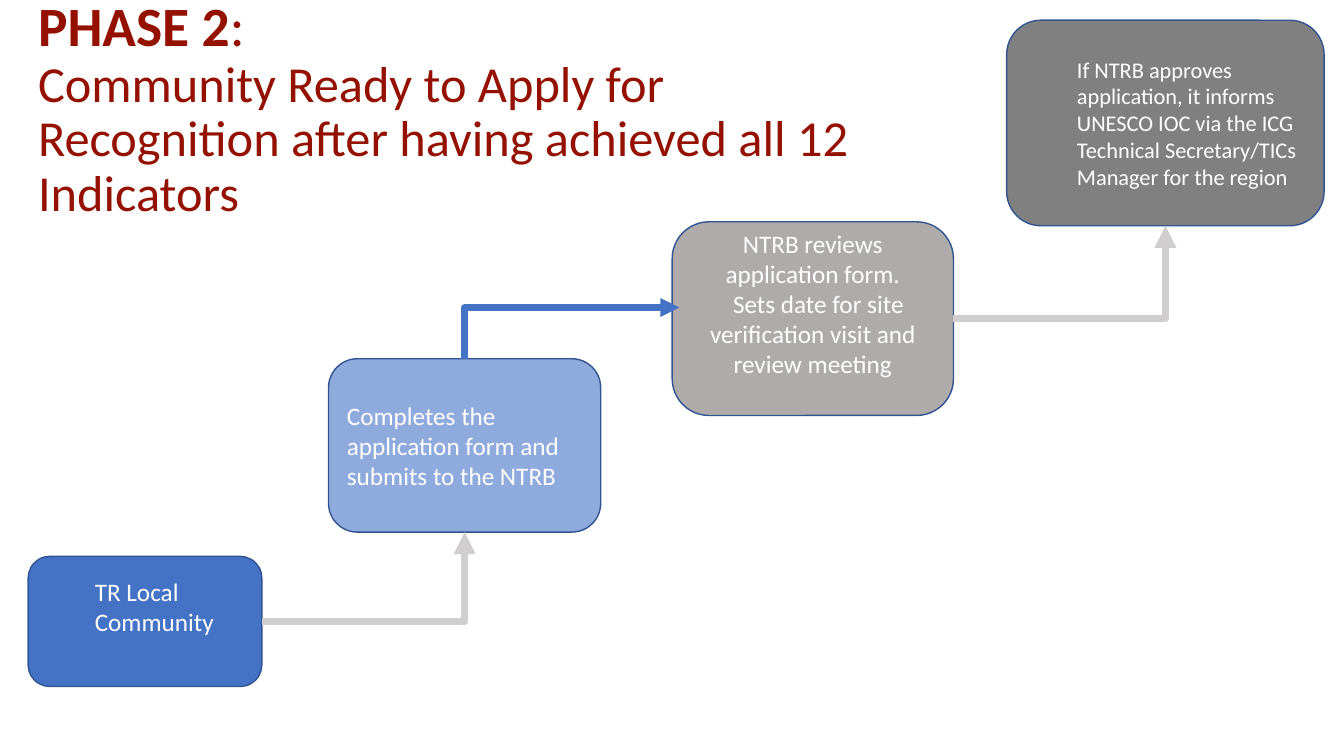
"""Builds the Phase 2 slide: four rising steps from local community to recognition."""
from pptx import Presentation
from pptx.dml.color import RGBColor
from pptx.enum.shapes import MSO_CONNECTOR, MSO_SHAPE
from pptx.enum.text import MSO_ANCHOR, PP_ALIGN
from pptx.oxml.ns import qn
from pptx.util import Cm, Pt
from lxml import etree

ROUNDED = MSO_SHAPE.ROUNDED_RECTANGLE
ELBOW = MSO_CONNECTOR.ELBOW
MIDDLE = MSO_ANCHOR.MIDDLE
LEFT, CENTER = PP_ALIGN.LEFT, PP_ALIGN.CENTER

DARK_RED = RGBColor(0x94, 0x11, 0x00)
WHITE = RGBColor(0xFF, 0xFF, 0xFF)
BLUE = RGBColor(0x44, 0x72, 0xC4)
LIGHT_BLUE = RGBColor(0x8F, 0xAA, 0xDC)
WARM_GREY = RGBColor(0xAF, 0xAB, 0xAB)
DARK_GREY = RGBColor(0x80, 0x80, 0x80)
ARROW_GREY = RGBColor(0xD0, 0xCE, 0xCE)
OUTLINE = RGBColor(0x32, 0x54, 0x91)

FONT = "Calibri"
HEADING_BOX = (0.71, 1.4, 22.5, 2.77)
HEADING = [
    [("PHASE 2", 39.6, True), (":", 39.6, False)],
    [("Community Ready to Apply for Recognition after having achieved all 12 Indicators", 36, False)],
]
STEPS = {
    "community": dict(
        box=(0.71, 14.02, 5.89, 3.28), fill=BLUE, size=18, level=1, bottom=0.89,
        lines=[("TR Local Community", 1.27, 0)]),
    "application": dict(
        box=(8.28, 9.04, 6.86, 4.37), fill=LIGHT_BLUE, size=18,
        lines=[("Completes the application form and submits to the NTRB", 0, 0)]),
    "review": dict(
        box=(16.94, 5.59, 7.09, 4.88), fill=WARM_GREY, size=18, align=CENTER, bottom=0.89, corner=0.19,
        lines=[("NTRB reviews application form.", 0, 0),
               ("Sets date for site verification visit and review meeting", 0, 0.28)]),
    "approval": dict(
        box=(25.37, 0.51, 8, 5.18), fill=DARK_GREY, size=16, level=1,
        lines=[("If NTRB approves application, it informs UNESCO IOC via the ICG "
                "Technical Secretary/TICs Manager for the region", 1.27, 0)]),
}
REVIEW_ENTRY = (17.12, 7.75)


def add_run(paragraph, text, size, color, bold=False):
    run = paragraph.add_run()
    run.text = text
    for name, value in dict(name=FONT, size=Pt(size), bold=bold).items():
        setattr(run.font, name, value)
    run.font.color.rgb = color


def add_heading(slide):
    frame = slide.shapes.add_textbox(*map(Cm, HEADING_BOX)).text_frame
    frame.word_wrap = True
    frame.vertical_anchor = MIDDLE
    paragraph = frame.paragraphs[0]
    paragraph.line_spacing = 0.9
    for number, line in enumerate(HEADING):
        if number:
            paragraph.add_line_break()
        for text, size, bold in line:
            add_run(paragraph, text, size, DARK_RED, bold)


def add_step(slide, step):
    shape = slide.shapes.add_shape(ROUNDED, *map(Cm, step["box"]))
    shape.shadow.inherit = False
    shape.adjustments[0] = step.get("corner", 0.1667)
    shape.fill.solid()
    shape.fill.fore_color.rgb = step["fill"]
    shape.line.color.rgb = OUTLINE
    shape.line.width = Pt(1)
    frame = shape.text_frame
    settings = dict(word_wrap=True, vertical_anchor=MIDDLE, margin_bottom=Cm(step.get("bottom", 0.13)))
    for name, value in settings.items():
        setattr(frame, name, value)
    for number, (text, margin, indent) in enumerate(step["lines"]):
        paragraph = frame.add_paragraph() if number else frame.paragraphs[0]
        paragraph.alignment = step.get("align", LEFT)
        paragraph.level = step.get("level", 0)
        properties = paragraph._p.get_or_add_pPr()
        properties.set("marL", str(Cm(margin)))
        properties.set("indent", str(Cm(indent)))
        add_run(paragraph, text, step["size"], WHITE)


def add_arrow(slide, start, end, color, width, upward_first=False):
    (x1, y1), (x2, y2) = start, end
    if upward_first:
        mid_x, mid_y = (x1 + x2) / 2, (y1 + y2) / 2
        half_w, half_h = (y1 - y2) / 2, (x2 - x1) / 2
        x1, y1, x2, y2 = mid_x + half_w, mid_y + half_h, mid_x - half_w, mid_y - half_h
    arrow = slide.shapes.add_connector(ELBOW, *map(Cm, (x1, y1, x2, y2)))
    arrow.line.color.rgb = color
    arrow.line.width = Pt(width)
    properties = arrow._element.spPr
    properties.find(qn("a:prstGeom")).set("prst", "bentConnector2")
    if upward_first:
        properties.find(qn("a:xfrm")).set("rot", str(90 * 60000))
    etree.SubElement(properties.find(qn("a:ln")), qn("a:tailEnd"), type="triangle")
    etree.SubElement(properties, qn("a:effectLst"))


def anchor(step, across, down):
    left, top, width, height = STEPS[step]["box"]
    return left + across * width, top + down * height


def main():
    deck = Presentation()
    deck.slide_width, deck.slide_height = Cm(33.87), Cm(19.05)
    slide = deck.slides.add_slide(deck.slide_layouts[6])
    add_heading(slide)
    for step in STEPS.values():
        add_step(slide, step)
    for source, target in (("community", "application"), ("review", "approval")):
        add_arrow(slide, anchor(source, 1, 0.5), anchor(target, 0.5, 1), ARROW_GREY, 5.25)
    add_arrow(slide, anchor("application", 0.5, 0), REVIEW_ENTRY, BLUE, 4.5, upward_first=True)
    deck.save("out.pptx")


if __name__ == "__main__":
    main()
